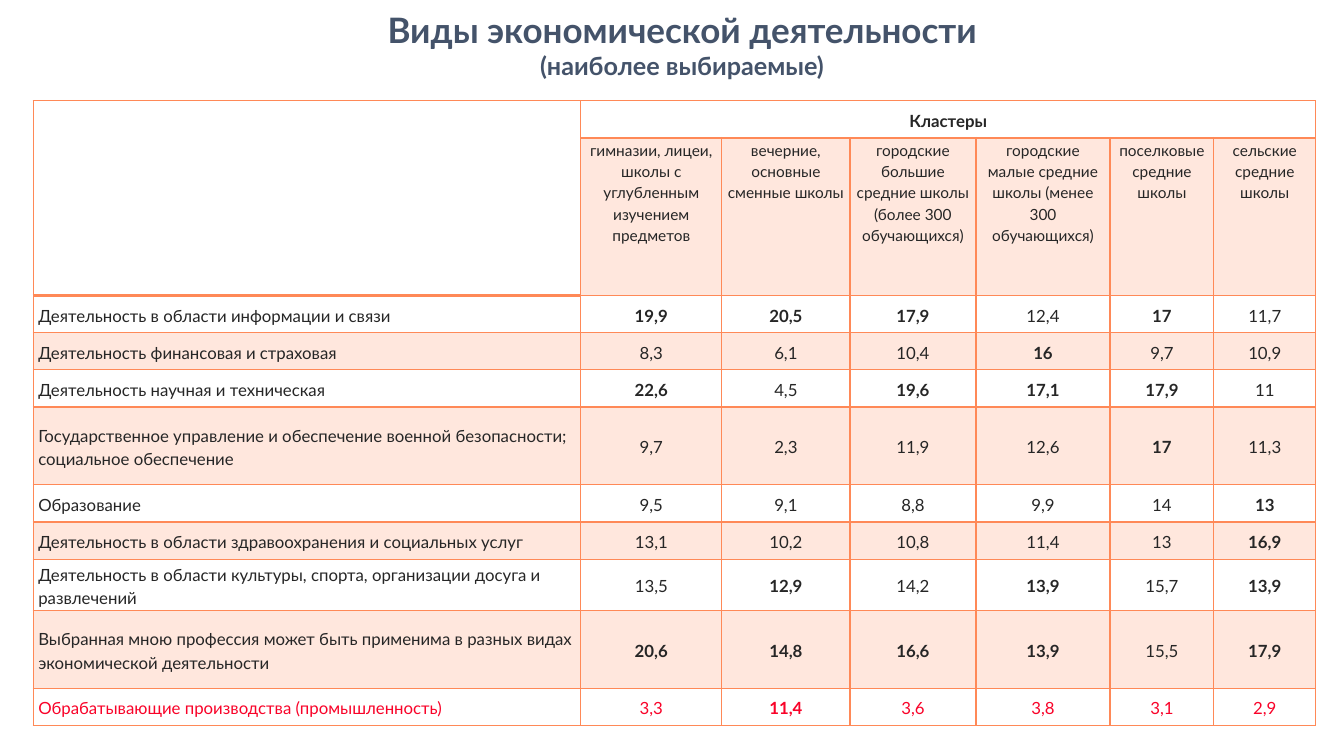
from lxml import etree
from pptx import Presentation
from pptx.dml.color import RGBColor
from pptx.enum.text import MSO_ANCHOR, MSO_AUTO_SIZE, PP_ALIGN
from pptx.oxml.ns import qn
from pptx.util import Inches, Pt

FONT = "Lato"
SLATE = RGBColor(0x44, 0x53, 0x6A)
ORANGE = RGBColor(0xFF, 0x89, 0x57)
INK = RGBColor(0x26, 0x26, 0x26)
RED = RGBColor(0xF9, 0x03, 0x29)

CLUSTERS = [
    "гимназии, лицеи, школы с углубленным изучением предметов",
    "вечерние, основные сменные школы",
    "городские большие средние школы (более 300 обучающихся)",
    "городские малые средние школы (менее 300 обучающихся)",
    "поселковые средние школы",
    "сельские средние школы",
]
# Shares by cluster; an asterisk marks a value set in bold
ACTIVITIES = [
    ("Деятельность в области информации и связи", "*19,9 *20,5 *17,9 12,4 *17 11,7"),
    ("Деятельность финансовая и страховая", "8,3 6,1 10,4 *16 9,7 10,9"),
    ("Деятельность научная и техническая", "*22,6 4,5 *19,6 *17,1 *17,9 11"),
    ("Государственное управление и обеспечение военной безопасности; социальное обеспечение",
     "9,7 2,3 11,9 12,6 *17 11,3"),
    ("Образование", "9,5 9,1 8,8 9,9 14 *13"),
    ("Деятельность в области здравоохранения и социальных услуг",
     "13,1 10,2 10,8 11,4 13 *16,9"),
    ("Деятельность в области культуры, спорта, организации досуга и развлечений",
     "13,5 *12,9 14,2 *13,9 15,7 *13,9"),
    ("Выбранная мною профессия может быть применима в разных видах экономической деятельности",
     "*20,6 *14,8 *16,6 *13,9 15,5 *17,9"),
    ("Обрабатывающие производства (промышленность)", "3,3 *11,4 3,6 3,8 3,1 2,9"),
]
COL_WIDTHS = [5.43, 1.4, 1.27, 1.25, 1.33, 1.03, 1.01]
ROW_HEIGHTS = [0.37, 1.56, 0.37, 0.37, 0.37, 0.77, 0.37, 0.37, 0.51, 0.77, 0.37]


def add_borders(cell, bottom_width):
    """Outline a cell; border elements must come before its fill."""
    props = cell._tc.get_or_add_tcPr()
    for index, side in enumerate(("lnL", "lnR", "lnT", "lnB")):
        width = bottom_width if side == "lnB" else 1
        line = etree.Element(qn(f"a:{side}"), w=str(Pt(width)))
        fill = etree.SubElement(line, qn("a:solidFill"))
        etree.SubElement(fill, qn("a:srgbClr"), val=str(ORANGE))
        props.insert(index, line)


def tint(cell):
    """Fill a cell with orange at 20 % opacity."""
    cell.fill.solid()
    cell.fill.fore_color.rgb = ORANGE
    color = cell._tc.tcPr.find(".//" + qn("a:srgbClr"))
    etree.SubElement(color, qn("a:alpha"), val="20000")


prs = Presentation()
prs.slide_width, prs.slide_height = Inches(13.33), Inches(7.5)
slide = prs.slides.add_slide(prs.slide_layouts[5])

# Title
title = slide.shapes.title
title.left, title.top = Inches(0.48), Inches(0.03)
title.width, title.height = Inches(12.57), Inches(0.82)
heading = title.text_frame
heading.text = "Виды экономической деятельности\n(наиболее выбираемые)"
heading.word_wrap = True
heading.auto_size = MSO_AUTO_SIZE.NONE
heading.vertical_anchor = MSO_ANCHOR.TOP
for paragraph, size in zip(heading.paragraphs, (25, 18)):
    paragraph.alignment = PP_ALIGN.CENTER
    paragraph.space_before = Pt(0)
    paragraph.font.name = FONT
    paragraph.font.size = Pt(size)
    paragraph.font.bold = True
    paragraph.font.color.rgb = SLATE

# Table grid
table = slide.shapes.add_table(
    len(ROW_HEIGHTS), len(COL_WIDTHS), Inches(0.33), Inches(1),
    Inches(sum(COL_WIDTHS)), Inches(sum(ROW_HEIGHTS))).table
table.first_row = table.horz_banding = False
for column, width in zip(table.columns, COL_WIDTHS):
    column.width = Inches(width)
for row, height in zip(table.rows, ROW_HEIGHTS):
    row.height = Inches(height)
table.cell(0, 0).merge(table.cell(1, 0))
table.cell(0, 1).merge(table.cell(0, 6))

# Table contents
grid = [["", "*Кластеры"] + [""] * 5, [""] + CLUSTERS]
grid += [[activity] + shares.split() for activity, shares in ACTIVITIES]
last_row = len(grid) - 1
for r, texts in enumerate(grid):
    for c, text in enumerate(texts):
        cell = table.cell(r, c)
        cluster_name = r == 1 and c > 0
        cell.text = text.lstrip("*")
        cell.margin_left = cell.margin_right = Inches(0.05)
        cell.margin_top = cell.margin_bottom = 0
        cell.vertical_anchor = MSO_ANCHOR.TOP if cluster_name else MSO_ANCHOR.MIDDLE

        paragraph = cell.text_frame.paragraphs[0]
        paragraph.alignment = PP_ALIGN.CENTER if c else PP_ALIGN.LEFT
        paragraph.line_spacing = 1.15
        if cluster_name:
            paragraph.space_after = Pt(10)
        paragraph.font.name = FONT
        paragraph.font.size = Pt(11 if cluster_name else 12)
        paragraph.font.bold = text.startswith("*")
        paragraph.font.color.rgb = RED if r == last_row else INK

        # Odd rows are tinted, except the empty corner
        if r % 2 and (r, c) != (1, 0):
            tint(cell)
        else:
            cell.fill.background()
        add_borders(cell, 2 if r == 0 or (r, c) == (1, 0) else 1)

prs.save("out.pptx")
